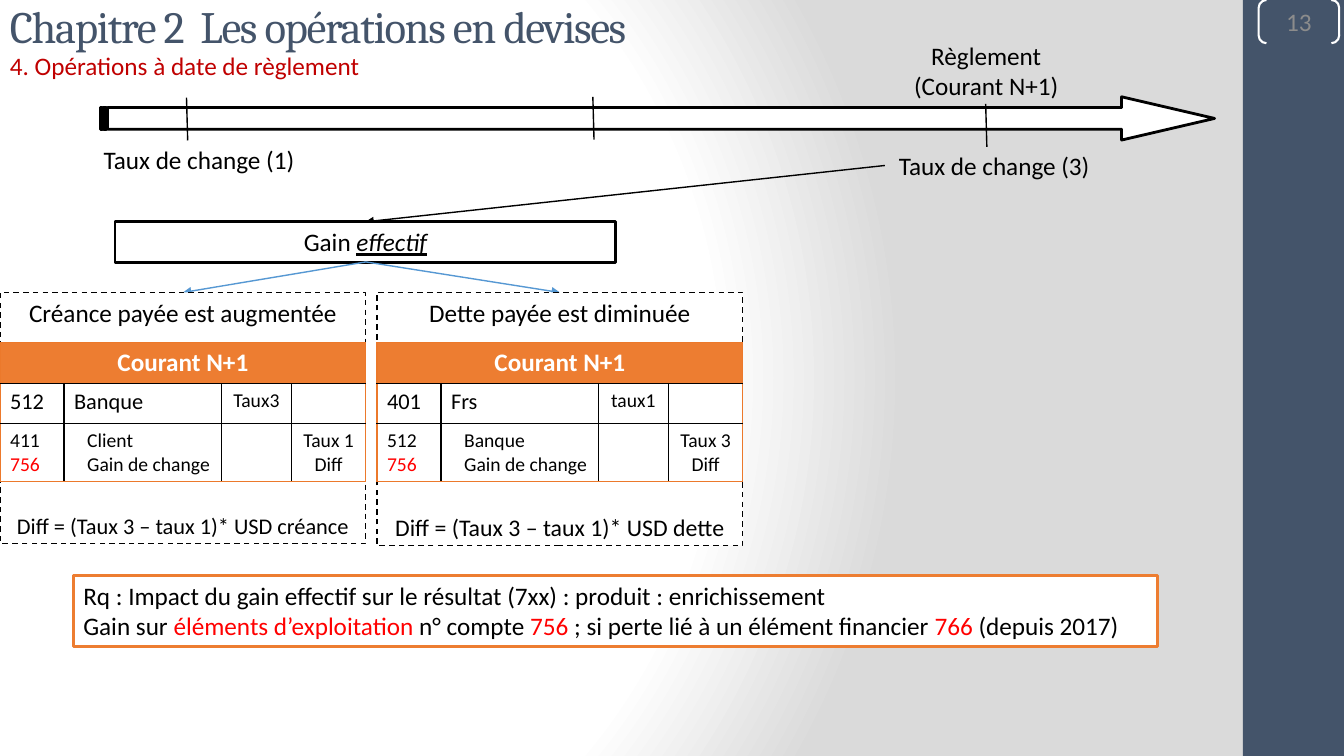
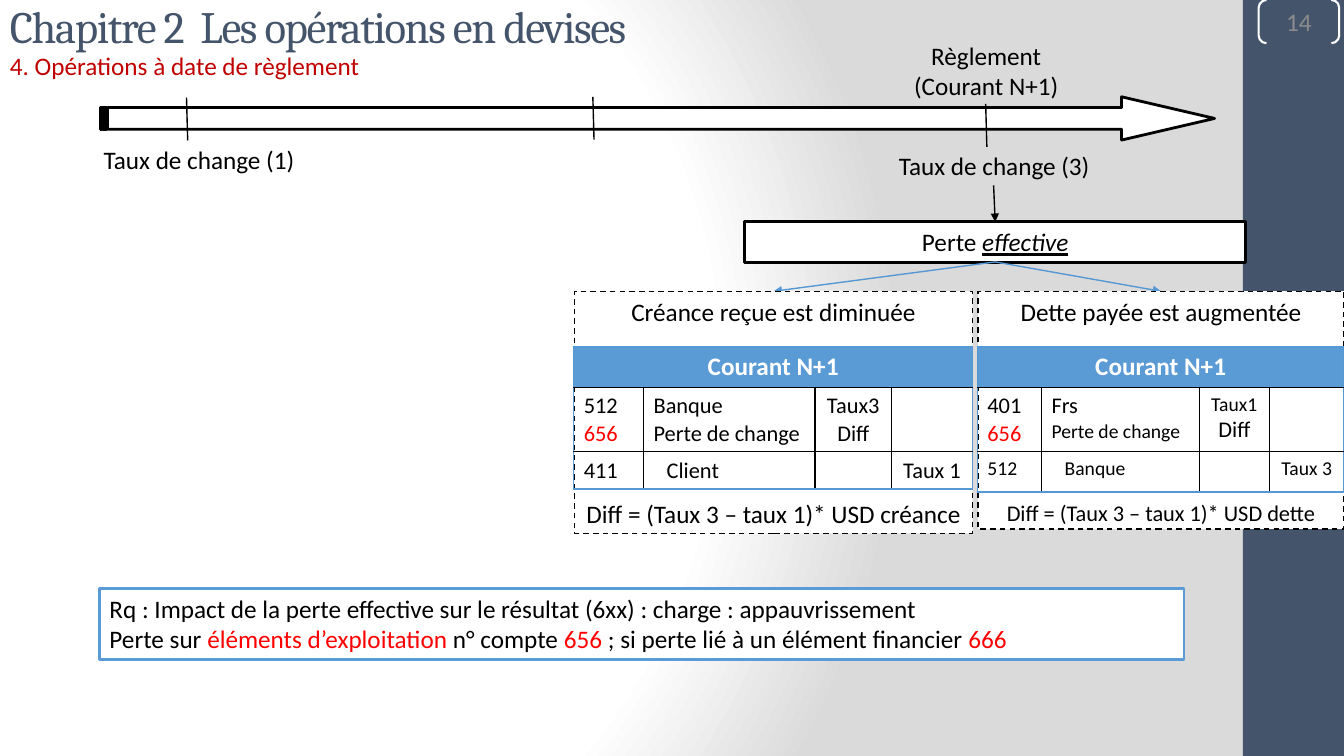
from lxml import etree
from pptx import Presentation, oxml
from pptx import util as u
from pptx.dml import color as dml
from pptx.enum import dml as lines, shapes, text
from pptx.oxml import ns

COLORS = {
    "black": "000000", "white": "FFFFFF", "red": "FF0000", "section": "C00000",
    "navy": "44546A", "number": "8C8C8C", "arrow": "5698D3",
    "orange": "ED7D31", "orange edge": "EC792B",
    "blue": "5B9BD5", "blue edge": "5698D3",
}
COLUMN_SHARES = (0.175, 0.43, 0.192, 0.203)
RESULT_ACCOUNTS = ("756", "656")
LEFT, CENTER = text.PP_ALIGN.LEFT, text.PP_ALIGN.CENTER
TOP, MIDDLE = text.MSO_ANCHOR.TOP, text.MSO_ANCHOR.MIDDLE
RECT = shapes.MSO_SHAPE.RECTANGLE
BACKGROUND = f"""<p:bg {ns.nsdecls("p", "a")}><p:bgPr><a:gradFill rotWithShape="1"><a:gsLst>
<a:gs pos="0"><a:srgbClr val="FFFFFF"/></a:gs><a:gs pos="75000"><a:srgbClr val="FFFFFF"/></a:gs>
<a:gs pos="100000"><a:srgbClr val="DADADA"/></a:gs></a:gsLst><a:path path="circle">
<a:fillToRect l="20000" t="50000" r="100000" b="50000"/></a:path></a:gradFill>
<a:effectLst/></p:bgPr></p:bg>"""


def rgb(name):
    return dml.RGBColor.from_string(COLORS[name])


class Deck:
    def __init__(self):
        self.prs = Presentation()
        self.prs.slide_width, self.prs.slide_height = u.Cm(33.87), u.Cm(19.05)
        self.s = None

    def add_run(self, p, words, size=18, color="black", font="Calibri", bold=False, emphasis=False):
        r = p.add_run()
        r.text = words
        r.font.name, r.font.size, r.font.bold = font, u.Pt(size), bold
        r.font.color.rgb = rgb(color)
        if emphasis:
            r.font.italic = r.font.underline = True
        return r

    def add_text(self, tf, paragraphs, align=CENTER, anchor=TOP):
        tf.word_wrap = True
        tf.vertical_anchor = anchor
        for i, runs in enumerate(paragraphs):
            p = tf.add_paragraph() if i else tf.paragraphs[0]
            p.alignment = align
            for words, style in runs:
                self.add_run(p, words, **style)
        return tf

    def shape(self, kind, x, y, w, h, fill=None, line=None, width=2):
        sp = self.s.shapes.add_shape(kind, u.Cm(x), u.Cm(y), u.Cm(w), u.Cm(h))
        sp.shadow.inherit = False
        if fill:
            sp.fill.solid()
            sp.fill.fore_color.rgb = rgb(fill)
        else:
            sp.fill.background()
        if line:
            sp.line.color.rgb = rgb(line)
            sp.line.width = u.Pt(width)
        else:
            sp.line.fill.background()
        return sp

    def label(self, x, y, w, h, *rows):
        sp = self.s.shapes.add_textbox(u.Cm(x), u.Cm(y), u.Cm(w), u.Cm(h))
        self.add_text(sp.text_frame, [[(row, {})] for row in rows])

    def line(self, x1, y1, x2, y2, color="black", arrow=False):
        cn = self.s.shapes.add_connector(
            shapes.MSO_CONNECTOR.STRAIGHT, u.Cm(x1), u.Cm(y1), u.Cm(x2), u.Cm(y2))
        cn.line.color.rgb = rgb(color)
        cn.line.width = u.Pt(1)
        props = cn.element.spPr
        if arrow:
            etree.SubElement(props.find(ns.qn("a:ln")), ns.qn("a:tailEnd"), type="triangle")
        etree.SubElement(props, ns.qn("a:effectLst"))

    def frame(self, number):
        self.s = self.prs.slides.add_slide(self.prs.slide_layouts[6])
        self.s.element[0].insert(0, oxml.parse_xml(BACKGROUND))
        self.shape(RECT, 31.32, 0, 2.55, 19.05, "navy")
        badge = self.shape(shapes.MSO_SHAPE.DOUBLE_BRACKET, 31.72, 0, 2.03, 1.09,
                           line="white", width=1.5)
        badge.adjustments[0] = 0.18
        tf = self.add_text(badge.text_frame, [[(str(number), {"color": "number"})]], anchor=MIDDLE)
        tf.margin_left = tf.margin_right = tf.margin_top = tf.margin_bottom = 0
        self.title("Chapitre 2  Les opérations en devises", "4. Opérations à date de règlement")

    def title(self, chapter, section):
        tf = self.s.shapes.add_textbox(u.Cm(0), u.Cm(0.89), u.Cm(28.22), u.Cm(1.57)).text_frame
        tf.word_wrap, tf.vertical_anchor = True, MIDDLE
        tf.margin_bottom = u.Cm(1.32)
        p = tf.paragraphs[0]
        p.line_spacing = 0.9
        r = self.add_run(p, chapter, 32, "navy", "Cambria")
        r._r.get_or_add_rPr().set("spc", "-100")
        p.add_line_break()
        self.add_run(p, section, color="section")

    def timeline(self):
        arrow = self.shape(shapes.MSO_SHAPE.STRIPED_RIGHT_ARROW, 2.54, 2.44, 28.07, 1.09,
                           "white", "black")
        arrow.adjustments[0], arrow.adjustments[1] = 0.5, 2.15
        for x, y in ((4.7, 2.46), (14.94, 2.44), (24.84, 2.62)):
            self.line(x, y, x + 0.03, y + 1.08)
        self.label(22.1, 0.89, 5.51, 1.8, "Règlement", "(Courant N+1)")
        self.label(22.3, 3.66, 5.51, 1.02, "Taux de change (3)")
        self.label(2.26, 3.51, 5.51, 1.02, "Taux de change (1)")

    def result(self, x, start, noun, adjective):
        self.line(*start, x + 6.31, 5.59, arrow=True)
        box = self.shape(RECT, x, 5.59, 12.62, 1.02, "white", "black")
        self.add_text(box.text_frame, [[(noun, {}), (adjective, {"emphasis": True})]])

    def branch(self, origin, x, y, w, h, heading, formula, size, gap):
        self.line(origin, 6.6, x + w / 2, y, "arrow", arrow=True)
        panel = self.shape(RECT, x, y, w, h, "white", "black", 1)
        panel.line.dash_style = lines.MSO_LINE.DASH
        tf = self.add_text(panel.text_frame, [[(heading, {})], [(formula, {"size": size})]])
        tf.paragraphs[1].space_before = u.Pt(gap)

    def edge(self, cell, position, side, color):
        ln = etree.Element(ns.qn("a:ln" + side), w="12700")
        fill = etree.SubElement(ln, ns.qn("a:solidFill"))
        etree.SubElement(fill, ns.qn("a:srgbClr"), val=COLORS[color])
        cell._tc.get_or_add_tcPr().insert(position, ln)

    def entry(self, x, y, w, heights, accent, rows):
        table = self.s.shapes.add_table(
            3, 4, u.Cm(x), u.Cm(y), u.Cm(w), u.Cm(sum(heights))).table
        table.horz_banding = False
        for column, share in zip(table.columns, COLUMN_SHARES):
            column.width = u.Cm(w * share)
        for row, height in zip(table.rows, heights):
            row.height = u.Cm(height)
        table.cell(0, 0).merge(table.cell(0, 3))
        header = [[("Courant N+1", 18)], [], [], []]
        for i, cells in enumerate([header, *rows]):
            for j, content in enumerate(cells):
                self.cell(table.cell(i, j), i, j, content, accent)

    def cell(self, cell, i, j, content, accent):
        paragraphs = []
        for words, size in content:
            color = "white" if i == 0 else "red" if words in RESULT_ACCOUNTS else "black"
            paragraphs.append([(words, {"size": size, "color": color, "bold": i == 0})])
        align = CENTER if i == 0 or j > 1 else LEFT
        self.add_text(cell.text_frame, paragraphs, align)
        cell.vertical_anchor = MIDDLE if i == 0 else TOP
        for p in cell.text_frame.paragraphs:
            if not content:
                etree.SubElement(p._p, ns.qn("a:endParaRPr"), sz="1400")
            if (i, j) == (2, 1):
                p._p.get_or_add_pPr().set("marL", str(u.Cm(0.33)))
        if i == 0:
            cell.fill.solid()
            cell.fill.fore_color.rgb = rgb(accent)
        else:
            cell.fill.background()
        outer = {"L": i == 0 or j == 0, "R": i == 0 or j == 3, "T": i == 0, "B": i == 2}
        for position, (side, is_outer) in enumerate(outer.items()):
            self.edge(cell, position, side, accent + " edge" if is_outer else "black")

    def note(self, x, y, accent, first, second):
        box = self.shape(RECT, x, y, 27.33, 1.8, "white", accent)
        runs = [(words, {"color": "red" if k % 2 else "black"}) for k, words in enumerate(second)]
        self.add_text(box.text_frame, [[(first, {})], runs], LEFT)


def gain_slide(deck):
    deck.frame(13)
    deck.timeline()
    deck.result(2.9, (22.3, 4.17), "Gain ", "effectif")
    branches = (
        (0, 6.32, "Créance payée est augmentée", "créance", 16,
         ("512", "Banque", "Taux3"), ("411", "Client", "Taux 1")),
        (9.5, 6.38, "Dette payée est diminuée", "dette", 17,
         ("401", "Frs", "taux1"), ("512", "Banque", "Taux 3")),
    )
    for x, h, heading, item, size, debit, credit in branches:
        deck.branch(9.22, x, 7.37, 9.22, h, heading,
                    f"Diff = (Taux 3 – taux 1)* USD {item}", size, 132)
        deck.entry(x, 8.64, 9.22, (1.02, 1.02, 1.46), "orange", [
            [[(debit[0], 16)], [(debit[1], 16)], [(debit[2], 14)], []],
            [[(credit[0], 14), ("756", 14)], [(credit[1], 14), ("Gain de change", 14)], [],
             [(credit[2], 14), ("Diff", 14)]],
        ])
    deck.note(1.85, 14.5, "orange",
              "Rq : Impact du gain effectif sur le résultat (7xx) : produit : enrichissement",
              ("Gain sur ", "éléments d’exploitation ", "n° compte ", "756 ",
               "; si perte lié à un élément financier ", "766 ", "(depuis 2017)"))


def loss_slide(deck):
    deck.frame(14)
    deck.timeline()
    deck.result(18.77, (25.04, 4.67), "Perte ", "effective")
    branches = (
        (14.48, 10.03, 6.1, "Créance reçue est diminuée", "créance", 18, 0.94, 16,
         ("512", "Banque", "Taux3"), ("411", "Client", "Taux 1")),
        (24.65, 9.22, 5.99, "Dette payée est augmentée", "dette", 16, 1.02, 14,
         ("401", "Frs", "Taux1"), ("512", "Banque", "Taux 3")),
    )
    for x, w, h, heading, item, size, last, small, debit, credit in branches:
        deck.branch(25.08, x, 7.34, w, h, heading,
                    f"Diff = (Taux 3 – taux 1)* USD {item}", size, 123)
        deck.entry(x - 0.02, 8.74, w + 0.02, (1.02, 1.62, last), "blue", [
            [[(debit[0], 16), ("656", 16)], [(debit[1], 16), ("Perte de change", small)],
             [(debit[2], small), ("Diff", 16)], []],
            [[(credit[0], small)], [(credit[1], small)], [], [(credit[2], small)]],
        ])
    deck.note(2.51, 14.83, "blue",
              "Rq : Impact de la perte effective sur le résultat (6xx) : charge : appauvrissement",
              ("Perte sur ", "éléments d’exploitation ", "n° compte ", "656",
               " ; si perte lié à un élément financier ", "666"))


def main():
    deck = Deck()
    gain_slide(deck)
    loss_slide(deck)
    deck.prs.save("out.pptx")


if __name__ == "__main__":
    main()
